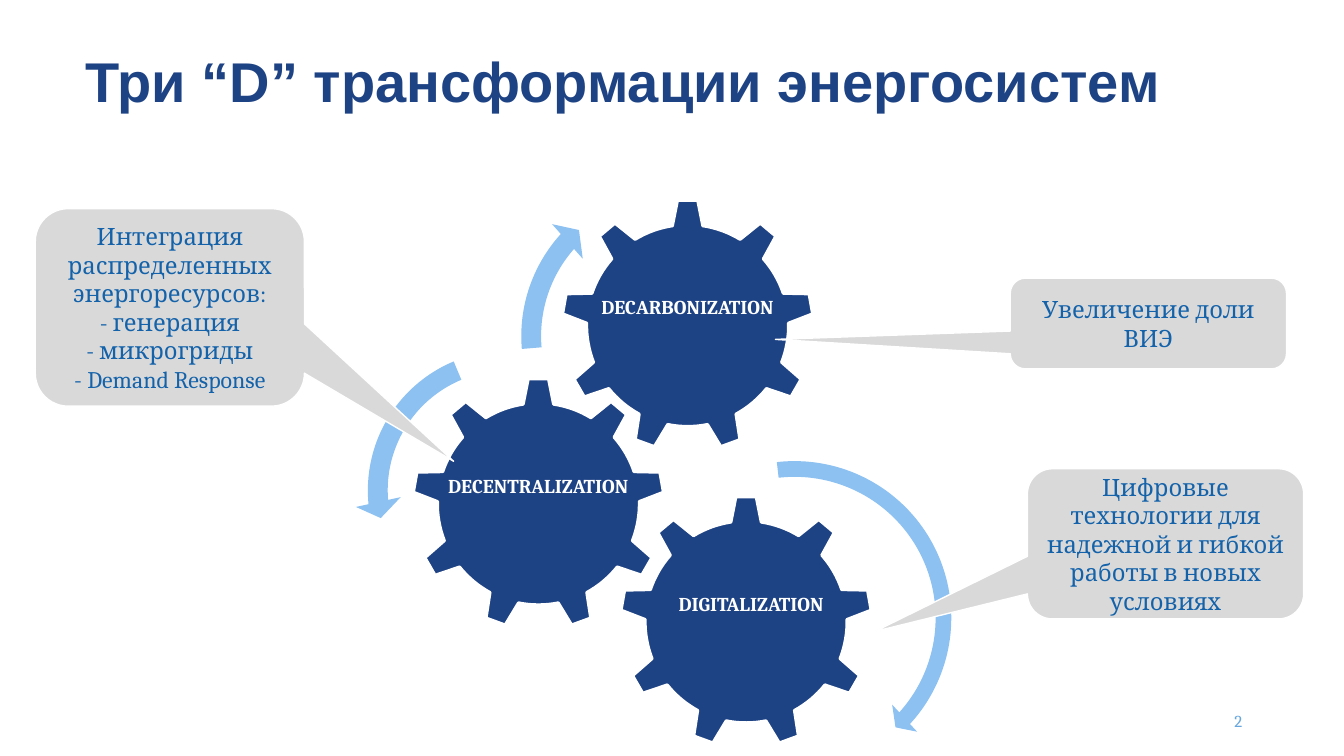
from math import cos, radians, sin

from pptx import Presentation
from pptx.dml.color import RGBColor
from pptx.enum import shapes, text
from pptx.util import Inches, Pt

NAVY = RGBColor(0x1E, 0x43, 0x85)
SKY = RGBColor(0x8C, 0xC1, 0xF2)
GRAY = RGBColor(0xD9, 0xD9, 0xD9)
WHITE = RGBColor(0xFF, 0xFF, 0xFF)
BLUE = RGBColor(0x13, 0x62, 0xAA)
PALE_BLUE = RGBColor(0x67, 0xA7, 0xDE)

TEETH = 9
BODY_RADIUS, TIP_RADIUS = 1.0, 1.244
BASE_HALF_ANGLE, TIP_HALF_ANGLE = 8.6, 4.6
ARC_STEPS = 8

# Centre x, centre y, label, label shift to the right
GEARS = [
    (6.82, 3.23, "DECARBONIZATION", 0),
    (5.34, 5.0, "DECENTRALIZATION", 0),
    (7.4, 6.17, "DIGITALIZATION", 0.05),
]
ROTATION_ARROWS = [
    (shapes.MSO_SHAPE.CIRCULAR_ARROW, (6.22, 4.47, 3.32, 3.32),
     (0.047, 2.99, 25.393, 158.123, 0.055)),
    (shapes.MSO_SHAPE.LEFT_CIRCULAR_ARROW, (3.52, 3.35, 3.03, 3.03),
     (0.065, 4.3, 104.891, 148.378, 0.075)),
    (shapes.MSO_SHAPE.CIRCULAR_ARROW, (5.04, 1.7, 3.27, 3.27),
     (0.06, 3.941, 133.138, 105.082, 0.07)),
]
# Box, pointer tip relative to the box, text
CALLOUTS = [
    ((10.02, 2.76, 2.74, 0.9), (-1.35, 0.175), "Увеличение доли ВИЭ"),
    ((10.19, 4.65, 2.74, 1.49), (-1.053, 0.584),
     "Цифровые технологии для надежной и гибкой работы в новых условиях"),
    ((0.35, 2.07, 2.67, 1.96), (1.054, 0.779),
     "Интеграция распределенных энергоресурсов:\n"
     "- генерация\n- микрогриды\n- Demand Response"),
]


def inches(box):
    return [Inches(length) for length in box]


def write(shape, wording, size, color, font="Cambria", bold=False,
          align=text.PP_ALIGN.CENTER, anchor=text.MSO_ANCHOR.MIDDLE,
          autosize=text.MSO_AUTO_SIZE.NONE, line_spacing=None):
    frame = shape.text_frame
    frame.word_wrap = True
    frame.auto_size = autosize
    frame.vertical_anchor = anchor
    paragraph = frame.paragraphs[0]
    paragraph.text = wording
    paragraph.alignment = align
    paragraph.line_spacing = line_spacing
    for run in paragraph.runs:
        run.font.name = font
        run.font.size = Pt(size)
        run.font.bold = bold
        run.font.color.rgb = color


def paint(shape, fill, outline=None, width=1):
    shape.shadow.inherit = False
    shape.fill.solid()
    shape.fill.fore_color.rgb = fill
    if outline is None:
        shape.line.fill.background()
    else:
        shape.line.color.rgb = outline
        shape.line.width = Pt(width)


def add_preset(slide, preset, box, adjustments):
    shape = slide.shapes.add_shape(preset, *inches(box))
    for index, value in enumerate(adjustments):
        shape.adjustments[index] = value
    return shape


def add_title(slide, box):
    title = slide.shapes.title
    title.left, title.top, title.width, title.height = inches(box)
    write(title, "Три “D” трансформации энергосистем", 40, NAVY, font="Arial",
          bold=True, align=text.PP_ALIGN.LEFT, anchor=text.MSO_ANCHOR.TOP,
          line_spacing=0.8)


def gear_outline(center_x, center_y):
    """Points of the gear, clockwise from the top tooth, in EMU."""
    pitch = 360 / TEETH
    gap = pitch - 2 * BASE_HALF_ANGLE
    profile = [(-TIP_HALF_ANGLE, TIP_RADIUS), (TIP_HALF_ANGLE, TIP_RADIUS)]
    profile += [(BASE_HALF_ANGLE + gap * step / ARC_STEPS, BODY_RADIUS)
                for step in range(ARC_STEPS + 1)]
    return [
        (Inches(center_x + radius * sin(radians(tooth * pitch + angle))),
         Inches(center_y - radius * cos(radians(tooth * pitch + angle))))
        for tooth in range(TEETH) for angle, radius in profile
    ]


def add_gear(slide, center_x, center_y, label, label_shift):
    start, *others = gear_outline(center_x, center_y)
    builder = slide.shapes.build_freeform(*start)
    builder.add_line_segments(others, close=True)
    paint(builder.convert_to_shape(), NAVY, WHITE, 2)
    label_box = (center_x - 1.33 + label_shift, center_y - 0.35, 2.66, 0.34)
    write(slide.shapes.add_textbox(*inches(label_box)), label, 14, WHITE,
          bold=True, anchor=text.MSO_ANCHOR.TOP,
          autosize=text.MSO_AUTO_SIZE.SHAPE_TO_FIT_TEXT)


def add_callout(slide, box, pointer, wording):
    callout = add_preset(slide, shapes.MSO_SHAPE.ROUNDED_RECTANGULAR_CALLOUT,
                         box, (*pointer, 0.167))
    paint(callout, GRAY, WHITE)
    write(callout, wording, 17, BLUE)


def add_page_number(slide, box):
    write(slide.shapes.add_textbox(*inches(box)), "2", 12, PALE_BLUE,
          align=text.PP_ALIGN.RIGHT)


def main():
    deck = Presentation()
    deck.slide_width, deck.slide_height = Inches(13.33), Inches(7.5)
    slide = deck.slides.add_slide(deck.slide_layouts[5])
    add_title(slide, (0.75, 0.54, 11.84, 1.45))
    for preset, box, adjustments in ROTATION_ARROWS:
        paint(add_preset(slide, preset, box, adjustments), SKY)
    for gear in GEARS:
        add_gear(slide, *gear)
    for callout in CALLOUTS:
        add_callout(slide, *callout)
    add_page_number(slide, (9.42, 6.95, 3, 0.4))
    deck.save("out.pptx")


if __name__ == "__main__":
    main()
